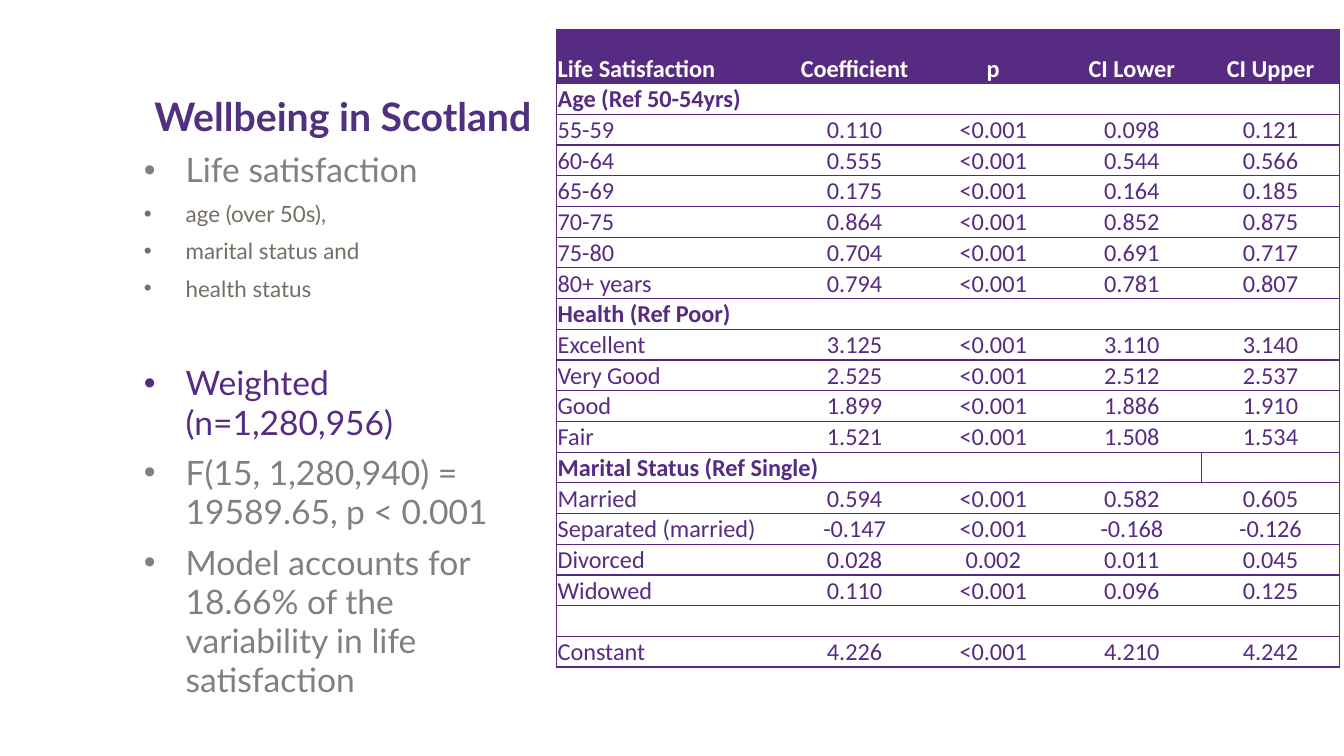
from lxml import etree
from pptx import Presentation
from pptx.dml.color import RGBColor
from pptx.enum.text import MSO_ANCHOR, PP_ALIGN
from pptx.oxml.ns import qn
from pptx.util import Cm, Pt

BOTTOM = MSO_ANCHOR.BOTTOM
TOP = MSO_ANCHOR.TOP
LEFT = PP_ALIGN.LEFT
CENTER = PP_ALIGN.CENTER

PURPLE = "572B82"
TITLE_PURPLE = "50307F"
BORDER = "552881"
GREY = "808080"
BROWN = "746E64"
WHITE = "FFFFFF"
NO_STYLE = "{2D5ABB26-0587-4C30-8999-92F81FD0307C}"


def rgb(value):
    return RGBColor.from_string(value)


def add_text_box(left, top, width, height):
    frame = slide.shapes.add_textbox(Cm(left), Cm(top), Cm(width), Cm(height)).text_frame
    frame.word_wrap = True
    frame.vertical_anchor = TOP
    frame.margin_left = frame.margin_right = frame.margin_top = frame.margin_bottom = 0
    return frame


deck = Presentation()
deck.slide_width = Cm(25.4)
deck.slide_height = Cm(14.28)
slide = deck.slides.add_slide(deck.slide_layouts[6])

title = add_text_box(2.92, 1.85, 7.67, 1.55).paragraphs[0]
title.text = "Wellbeing in Scotland"
title.line_spacing = Pt(22)
title.font.name = "Lato"
title.font.size = Pt(21)
title.font.bold = True
title.font.color.rgb = rgb(TITLE_PURPLE)

bullets = [
    ("Life satisfaction", 0, GREY, 0),
    ("age (over 50s),", 1, BROWN, 0),
    ("marital status and", 1, BROWN, 0),
    ("health status", 1, BROWN, 0),
    ("Weighted (n=1,280,956)", 0, PURPLE, 27),
    ("F(15, 1,280,940) = 19589.65, p < 0.001", 0, GREY, 0),
    ("Model accounts for 18.66% of the variability in life satisfaction", 0, GREY, 0),
]
body = add_text_box(2.72, 2.84, 7.49, 9.86)
for index, (text, level, color, space_before) in enumerate(bullets):
    para = body.add_paragraph() if index else body.paragraphs[0]
    para.text = text
    para.level = level
    para.line_spacing = Pt(14 if level else 21)
    para.space_after = Pt(6)
    if space_before:
        para.space_before = Pt(space_before)
    properties = para._p.get_or_add_pPr()
    properties.set("marL", str(Cm(0.79)))
    properties.set("indent", str(-Cm(0.79)))
    etree.SubElement(properties, qn("a:buFont"), typeface="Arial")
    etree.SubElement(properties, qn("a:buChar"), char="•")
    para.font.name = "Lato"
    para.font.size = Pt(12 if level else 18)
    para.font.color.rgb = rgb(color)

rows = [
    ["Life Satisfaction", "Coefficient", "p", "CI Lower", "CI Upper"],
    ["Age (Ref 50-54yrs)"],
    ["55-59", "0.110", "<0.001", "0.098", "0.121"],
    ["60-64", "0.555", "<0.001", "0.544", "0.566"],
    ["65-69", "0.175", "<0.001", "0.164", "0.185"],
    ["70-75", "0.864", "<0.001", "0.852", "0.875"],
    ["75-80", "0.704", "<0.001", "0.691", "0.717"],
    ["80+ years", "0.794", "<0.001", "0.781", "0.807"],
    ["Health (Ref Poor)"],
    ["Excellent", "3.125", "<0.001", "3.110", "3.140"],
    ["Very Good", "2.525", "<0.001", "2.512", "2.537"],
    ["Good", "1.899", "<0.001", "1.886", "1.910"],
    ["Fair", "1.521", "<0.001", "1.508", "1.534"],
    ["Marital Status (Ref Single)"],
    ["Married", "0.594", "<0.001", "0.582", "0.605"],
    ["Separated (married)", "-0.147", "<0.001", "-0.168", "-0.126"],
    ["Divorced", "0.028", "0.002", "0.011", "0.045"],
    ["Widowed", "0.110", "<0.001", "0.096", "0.125"],
    [],
    ["Constant", "4.226", "<0.001", "4.210", "4.242"],
]
column_widths = [4.32, 2.62, 2.62, 2.62, 2.62]
last_column = len(column_widths) - 1
marital_row = rows.index(["Marital Status (Ref Single)"])

table = slide.shapes.add_table(
    len(rows), len(column_widths), Cm(10.52), Cm(0.56), Cm(14.8), Cm(12.04)
).table
table._tbl.tblPr.find(qn("a:tableStyleId")).text = NO_STYLE
table.horz_banding = False
for column, width in zip(table.columns, column_widths):
    column.width = Cm(width)

for row_index, values in enumerate(rows):
    is_header = row_index == 0
    table.rows[row_index].height = Cm(1.02 if is_header else 0.58)
    for column_index in range(len(column_widths)):
        cell = table.cell(row_index, column_index)
        cell.vertical_anchor = BOTTOM
        cell.margin_left = cell.margin_right = cell.margin_top = Cm(0.02)
        cell.margin_bottom = 0

        sides = ["lnT", "lnB"]
        if column_index == last_column:
            sides.insert(0, "lnR")
        if column_index == 0 or (row_index, column_index) == (marital_row, last_column):
            sides.insert(0, "lnL")
        for side in sides:
            line = etree.SubElement(cell._tc.get_or_add_tcPr(), qn(f"a:{side}"), w=str(Pt(0.75)))
            line_fill = etree.SubElement(line, qn("a:solidFill"))
            etree.SubElement(line_fill, qn("a:srgbClr"), val=BORDER)
        cell.fill.solid()
        cell.fill.fore_color.rgb = rgb(PURPLE if is_header else WHITE)

        para = cell.text_frame.paragraphs[0]
        if column_index < len(values):
            para.text = values[column_index]
            para.alignment = CENTER if column_index else LEFT
            para.font.name = "Calibri"
            para.font.size = Pt(13)
            para.font.bold = is_header or len(values) == 1
            para.font.color.rgb = rgb(WHITE if is_header else PURPLE)
        else:
            etree.SubElement(para._p, qn("a:endParaRPr"), sz="1300")

table.cell(marital_row, 0).merge(table.cell(marital_row, 1))

deck.save("out.pptx")
